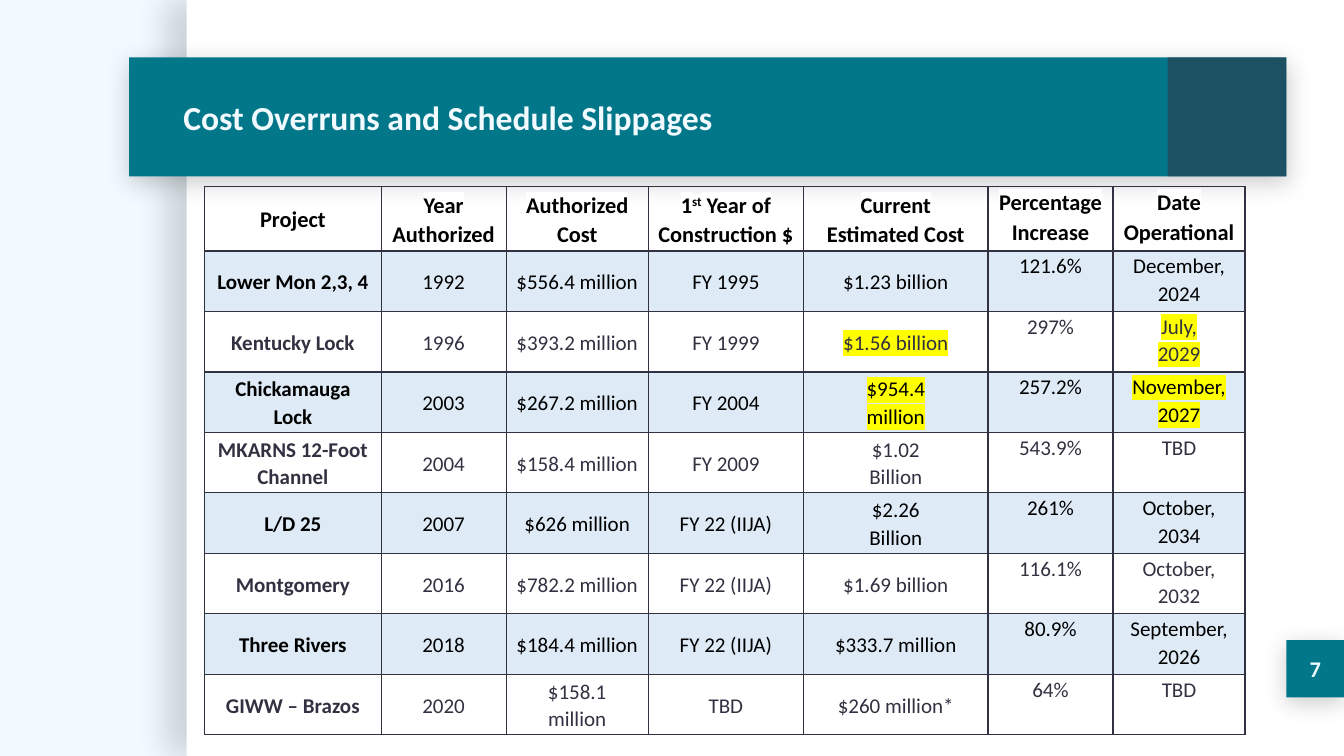
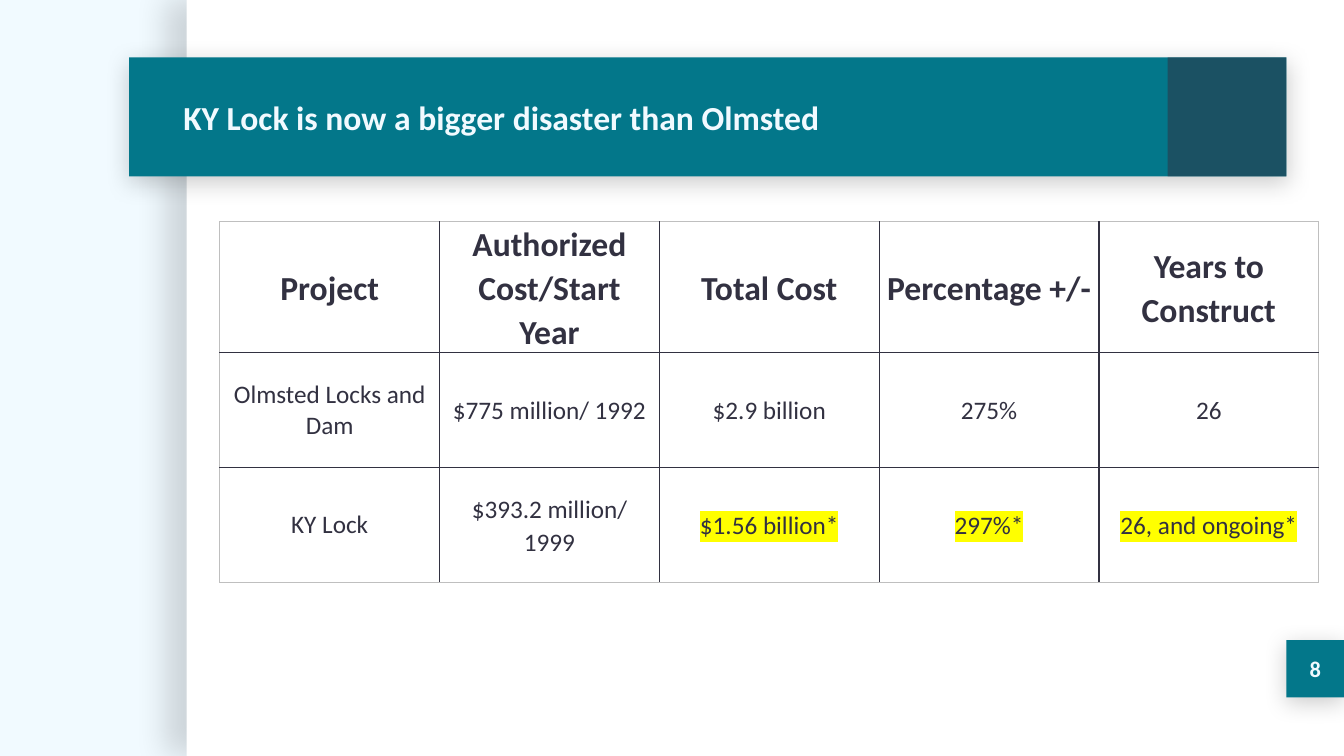
from lxml.etree import SubElement
from pptx import Presentation
from pptx.dml.color import RGBColor
from pptx.enum.shapes import MSO_SHAPE
from pptx.enum.text import MSO_ANCHOR, PP_ALIGN
from pptx.oxml import parse_xml
from pptx.oxml.ns import nsdecls, qn
from pptx.util import Inches, Pt

FONT = "Calibri"
COLORS = {
    "pale": "F1FAFF", "white": "FFFFFF", "teal": "03778A", "dark": "323141",
    "black": "000000", "row": "DEEAF6", "mark": "FFFF00", "edge": "BFBFBF",
}
PAGE_SHADOW = (15, 22.5, 15, 180)  # opacity %, blur pt, distance pt, angle
BAND_SHADOW = (20, 16.9, 3.8, 90)

prs = Presentation()
prs.slide_width, prs.slide_height = Inches(13.33), Inches(7.5)


def add_box(s, x, y, w, h, color, shadow=None):
    sp = s.shapes.add_shape(MSO_SHAPE.RECTANGLE, Inches(x), Inches(y), Inches(w), Inches(h))
    sp.fill.solid()
    sp.fill.fore_color.rgb = RGBColor.from_string(COLORS[color])
    sp.line.fill.background()
    sp.shadow.inherit = False
    if shadow:
        alpha, blur, dist, angle = shadow
        effects = sp._element.spPr.find(qn("a:effectLst"))
        effects.append(parse_xml(
            f'<a:outerShdw {nsdecls("a")} blurRad="{Pt(blur)}" dist="{Pt(dist)}" '
            f'dir="{angle * 60000}" algn="ctr" rotWithShape="0"><a:srgbClr val="000000">'
            f'<a:alpha val="{alpha * 1000}"/></a:srgbClr></a:outerShdw>'))
    return sp


def format_run(r, size, color, bold, highlight=None):
    r.font.size, r.font.bold, r.font.name = Pt(size), bold, FONT
    r.font.color.rgb = RGBColor.from_string(COLORS[color])
    if highlight:
        r.font._element.find(qn("a:solidFill")).addnext(parse_xml(
            f'<a:highlight {nsdecls("a")}><a:srgbClr val="{COLORS[highlight]}"/></a:highlight>'))


# Table content: ^ encloses superscript, \n starts a paragraph, \v breaks a line
project_rows = [
    ["Project", "Year Authorized", "Authorized Cost", "1^st^ Year of Construction $",
     "Current Estimated Cost", "Percentage Increase", "Date Operational"],
    ["Lower Mon 2,3, 4", "1992", "$556.4 million", "FY 1995", "$1.23 billion", "121.6%",
     "December,\v2024"],
    ["Kentucky Lock", "1996", "$393.2 million", "FY 1999", "$1.56 billion", "297%",
     "July,\n2029"],
    ["Chickamauga Lock", "2003", "$267.2 million", "FY 2004", "$954.4\vmillion", "257.2%",
     "November,\n2027"],
    ["MKARNS 12-Foot Channel", "2004", "$158.4 million", "FY 2009", "$1.02\vBillion", "543.9%",
     "TBD"],
    ["L/D 25", "2007", "$626 million", "FY 22 (IIJA)", "$2.26\vBillion", "261%",
     "October,\n2034"],
    ["Montgomery", "2016", "$782.2 million", "FY 22 (IIJA)", "$1.69 billion", "116.1%",
     "October,\n2032"],
    ["Three Rivers", "2018", "$184.4 million", "FY 22 (IIJA)", "$333.7 million", "80.9%",
     "September,\n2026"],
    ["GIWW – Brazos", "2020", "$158.1\vmillion", "TBD", "$260 million*", "64%", "TBD"],
]
lock_rows = [
    ["Project", "Authorized Cost/Start Year", "Total Cost", "Percentage +/-",
     "Years to Construct"],
    ["Olmsted Locks and Dam", "$775 million/ 1992", "$2.9 billion", "275%", "26"],
    ["KY Lock", "$393.2 million/ 1999", "$1.56 billion*", "297%*", "26, and ongoing*"],
]
slides = [
    {"title": "Cost Overruns and Schedule Slippages", "rows": project_rows,
     "at": (2.03, 1.85), "cols": [1.75, 1.24, 1.41, 1.54, 1.83, 1.24, 1.31],
     "heights": [0.64] + [0.6] * 8, "sizes": (16, 15), "margins": (0.09, 0.01, 0.09, 0),
     "after": 0, "banded": True, "edge": "dark",
     "marked": {(2, 4), (2, 6), (3, 4), (3, 6)}},
    {"title": "KY Lock is now a bigger disaster than Olmsted", "rows": lock_rows,
     "at": (2.18, 2.2), "cols": [2.18] * 5,
     "heights": [1.3, 1.14, 1.14], "sizes": (24, 18), "margins": (0.07, 0, 0.07, 0),
     "after": 8, "banded": False, "edge": "edge",
     "marked": {(2, 2), (2, 3), (2, 4)}},
]

for number, data in enumerate(slides, start=7):
    s = prs.slides.add_slide(prs.slide_layouts[6])
    s.background.fill.solid()
    s.background.fill.fore_color.rgb = RGBColor.from_string(COLORS["pale"])

    # Page panel, title band and its translucent end square
    add_box(s, 1.85, 0, 11.48, 7.5, "white", PAGE_SHADOW)
    add_box(s, 1.28, 0.57, 11.48, 1.18, "teal", BAND_SHADOW)
    square = add_box(s, 11.58, 0.57, 1.18, 1.18, "dark")
    color = square._element.spPr.find(qn("a:solidFill"))[0]
    SubElement(color, qn("a:alpha"), val="53000")

    # Title and page number
    title = s.shapes.add_textbox(Inches(1.72), Inches(0.57), Inches(9.83), Inches(1.18))
    badge = add_box(s, 12.76, 6.35, 0.57, 0.57, "teal", BAND_SHADOW)
    for sp, text, size, align in [(title, data["title"], 24, PP_ALIGN.LEFT),
                                  (badge, str(number), 16, PP_ALIGN.CENTER)]:
        tf = sp.text_frame
        tf.word_wrap = True
        tf.vertical_anchor = MSO_ANCHOR.MIDDLE
        tf.margin_left = tf.margin_right = tf.margin_top = tf.margin_bottom = Inches(0.1)
        tf.text = text
        tf.paragraphs[0].alignment = align
        format_run(tf.paragraphs[0].runs[0], size, "pale", True)

    # Table grid
    rows, cols, heights = data["rows"], data["cols"], data["heights"]
    x, y = data["at"]
    table = s.shapes.add_table(len(rows), len(cols), Inches(x), Inches(y),
                               Inches(sum(cols)), Inches(sum(heights))).table
    table.first_row = table.horz_banding = False
    for column, width in zip(table.columns, cols):
        column.width = Inches(width)
    for row, height in zip(table.rows, heights):
        row.height = Inches(height)

    for i, row in enumerate(rows):
        for j, text in enumerate(row):
            cell = table.cell(i, j)
            banded = data["banded"]
            shaded = banded and i % 2 == 1
            plain = not banded and i > 0 and j == 0

            # Cell fill, margins and borders
            if shaded:
                cell.fill.solid()
                cell.fill.fore_color.rgb = RGBColor.from_string(COLORS["row"])
            else:
                cell.fill.background()
            if not plain:
                (cell.margin_left, cell.margin_top, cell.margin_right,
                 cell.margin_bottom) = [Inches(m) for m in data["margins"]]
            top = banded and j >= 5
            cell.vertical_anchor = MSO_ANCHOR.TOP if top else MSO_ANCHOR.MIDDLE
            outer = {"L": j == 0, "R": j == len(cols) - 1, "T": i == 0, "B": i == len(rows) - 1}
            for k, (side, on_edge) in enumerate(outer.items()):
                line = COLORS[data["edge"] if on_edge else "dark"]
                cell._tc.get_or_add_tcPr().insert(k, parse_xml(
                    f'<a:ln{side} {nsdecls("a")} w="{Pt(1)}"><a:solidFill>'
                    f'<a:srgbClr val="{line}"/></a:solidFill></a:ln{side}>'))

            # Cell text
            color = "black" if banded and (i == 0 or shaded) else "dark"
            bold = i == 0 or (banded and j == 0)
            mark = "mark" if (i, j) in data["marked"] else None
            if banded and i == 0:
                mark = "white"
            tf = cell.text_frame
            tf.text = text
            for p in tf.paragraphs:
                p.alignment = PP_ALIGN.CENTER
                if not plain:
                    p.line_spacing = 1.07
                    p.space_after = Pt(data["after"])
                if "^" in p.text:
                    parts = p.text.split("^")
                    p.text = parts[0]
                    for k, part in enumerate(parts[1:]):
                        r = p.add_run()
                        r.text = part
                        if k % 2 == 0:
                            r.font._element.set("baseline", "30000")
                for r in p.runs:
                    format_run(r, data["sizes"][min(i, 1)], color, bold, mark)
                for br in p._p.findall(qn("a:br")):
                    SubElement(br, qn("a:rPr"), sz=str(data["sizes"][1] * 100))

prs.save("out.pptx")
